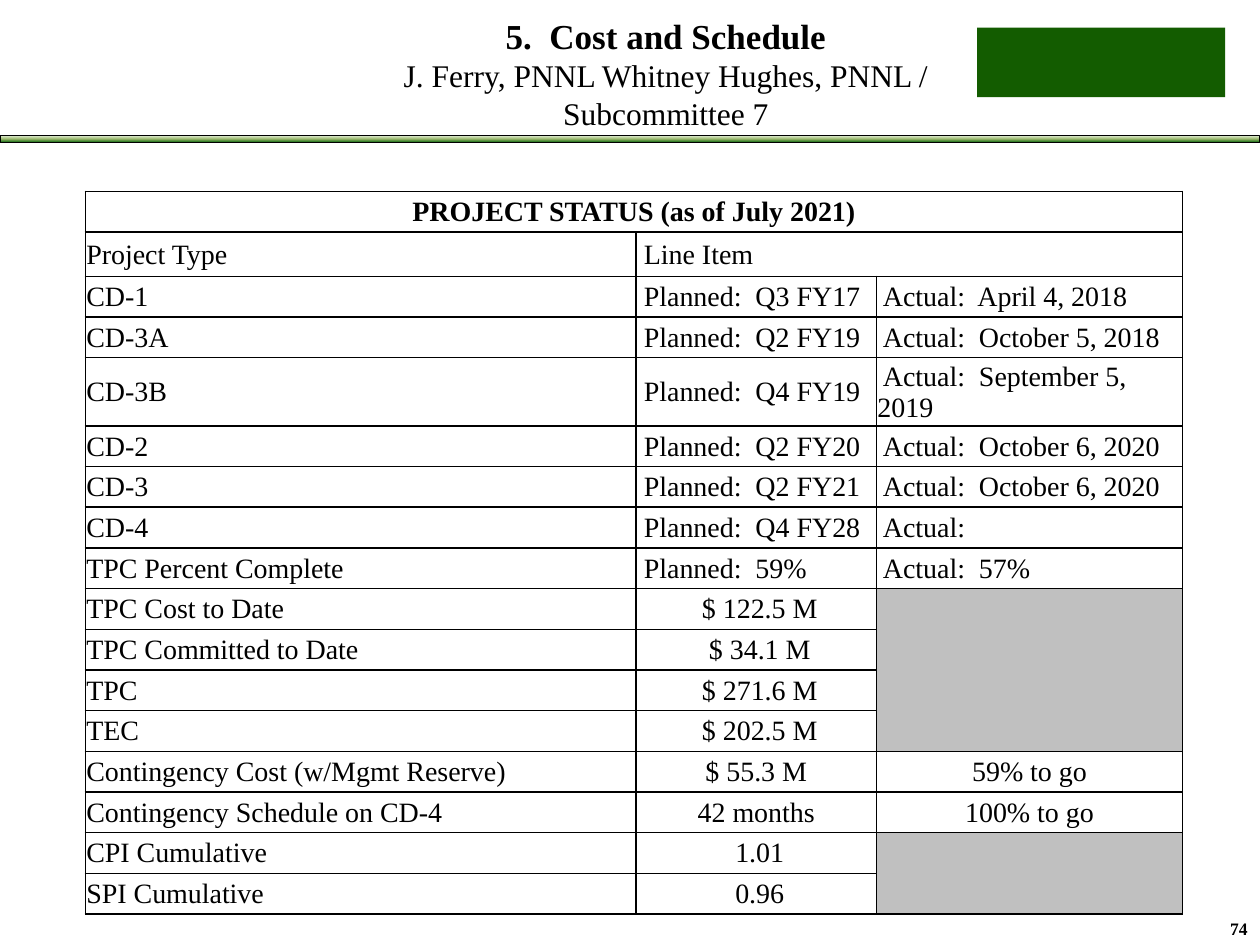
from lxml import etree
from pptx import Presentation
from pptx import util as u
from pptx.dml.color import RGBColor
from pptx.enum import shapes, text
from pptx.oxml import ns, parse_xml

Cm, Pt = u.Cm, u.Pt
LEFT, CENTER, RIGHT = text.PP_ALIGN.LEFT, text.PP_ALIGN.CENTER, text.PP_ALIGN.RIGHT
SERIF = "Times New Roman"
COLORS = {"black": "000000", "white": "FFFFFF", "gray": "C0C0C0", "green": "135C00",
          "band_light": "DDEBCF", "band_mid": "9CB86E", "band_dark": "156B13"}

HEADING = "PROJECT STATUS (as of July 2021)"
MILESTONES = [
    ("Project Type", " Line Item", ""),
    ("CD-1", " Planned:  Q3 FY17", " Actual:  April 4, 2018"),
    ("CD-3A", " Planned:  Q2 FY19", " Actual:  October 5, 2018"),
    ("CD-3B", " Planned:  Q4 FY19", " Actual:  September 5, 2019"),
    ("CD-2", " Planned:  Q2 FY20", " Actual:  October 6, 2020"),
    ("CD-3", " Planned:  Q2 FY21", " Actual:  October 6, 2020"),
    ("CD-4", " Planned:  Q4 FY28", " Actual: "),
    ("TPC Percent Complete", " Planned:  59%", " Actual:  57%"),
]
AMOUNTS = [
    ("TPC Cost to Date", " $ 122.5 M", ""),
    ("TPC Committed to Date", " $ 34.1 M", ""),
    ("TPC", " $ 271.6 M", ""),
    ("TEC", " $ 202.5 M", ""),
    ("Contingency Cost (w/Mgmt Reserve)", "$ 55.3 M", "59% to go"),
    ("Contingency Schedule on CD-4", "42 months", "100% to go"),
    ("CPI Cumulative", " 1.01", ""),
    ("SPI Cumulative", " 0.96", ""),
]
COLUMN_WIDTHS = (11.1, 4.85, 6.17)
ROW_HEIGHT = 0.82
TALL_ROWS = {1: 0.89, 4: 1.37}
MERGES = [((0, 0), (0, 2)), ((1, 1), (1, 2)), ((9, 2), (12, 2)), ((15, 2), (16, 2))]
GRAY_CELLS = {(9, 2), (15, 2)}


def rgb(name):
    return RGBColor.from_string(COLORS[name])


def set_font(font, size, bold=False):
    font.name, font.size, font.bold = SERIF, Pt(size), bold
    font.color.rgb = rgb("black")


def add_text_box(s, left, top, width, height, align, anchor=text.MSO_ANCHOR.TOP):
    """Add a wrapping text box and return its first paragraph."""
    tf = s.shapes.add_textbox(Cm(left), Cm(top), Cm(width), Cm(height)).text_frame
    tf.word_wrap = True
    tf.vertical_anchor = anchor
    p = tf.paragraphs[0]
    p.alignment = align
    return p


def add_run(p, words, size, bold=False):
    r = p.add_run()
    r.text = words
    set_font(r.font, size, bold)


def add_rectangle(s, left, top, width, height):
    sp = s.shapes.add_shape(shapes.MSO_SHAPE.RECTANGLE,
                            Cm(left), Cm(top), Cm(width), Cm(height))
    sp.shadow.inherit = False
    return sp


def add_band(s):
    """Add the green gradient rule below the header."""
    sp = add_rectangle(s, 0, 2.74, 25.4, 0.13)
    stops = "".join(f'<a:gs pos="{pos}"><a:srgbClr val="{COLORS[name]}"/></a:gs>'
                    for pos, name in ((0, "band_light"), (50000, "band_mid"),
                                      (100000, "band_dark")))
    gradient = parse_xml(f'<a:gradFill {ns.nsdecls("a")}><a:gsLst>{stops}</a:gsLst>'
                         '<a:lin ang="5400000" scaled="0"/></a:gradFill>')
    sp._element.spPr.find(ns.qn("a:prstGeom")).addnext(gradient)
    sp.line.color.rgb = rgb("black")
    sp.line.width = Pt(0.5)


def add_corner_block(s):
    sp = add_rectangle(s, 19.7, 0.56, 5, 1.4)
    sp.fill.solid()
    sp.fill.fore_color.rgb = rgb("green")
    sp.line.fill.background()


def add_title(s):
    p = add_text_box(s, 7.01, 0.32, 12.83, 2.31, CENTER, text.MSO_ANCHOR.MIDDLE)
    add_run(p, "5.  Cost and Schedule", 20, True)
    p.add_line_break()
    add_run(p, "J. Ferry, PNNL Whitney Hughes, PNNL / Subcommittee 7", 18)


def add_page_number(s):
    p = add_text_box(s, 24.36, 18.39, 1.04, 0.66, RIGHT)
    p.text = "74"
    set_font(p.font, 10, True)


def set_borders(cell):
    tc_pr = cell._tc.get_or_add_tcPr()
    for side in ("lnL", "lnR", "lnT", "lnB"):
        ln = etree.SubElement(tc_pr, ns.qn(f"a:{side}"), w=str(Pt(1)))
        fill = etree.SubElement(ln, ns.qn("a:solidFill"))
        etree.SubElement(fill, ns.qn("a:srgbClr"), val=COLORS["black"])


def fill_cell(cell, words, align, bold, background):
    set_borders(cell)
    cell.fill.solid()
    cell.fill.fore_color.rgb = rgb(background)
    cell.margin_left = cell.margin_right = cell.margin_top = Cm(0.02)
    cell.margin_bottom = 0
    cell.vertical_anchor = text.MSO_ANCHOR.MIDDLE
    p = cell.text_frame.paragraphs[0]
    p.text = words
    p.alignment = align
    set_font(p.font, 16, bold)


def add_status_table(s):
    rows = [(HEADING, "", "")] + MILESTONES + AMOUNTS
    heights = [TALL_ROWS.get(i, ROW_HEIGHT) for i in range(len(rows))]
    table = s.shapes.add_table(len(rows), len(COLUMN_WIDTHS), Cm(1.72), Cm(3.86),
                               Cm(sum(COLUMN_WIDTHS)), Cm(sum(heights))).table
    table.first_row = table.horz_banding = False
    for column, width in zip(table.columns, COLUMN_WIDTHS):
        column.width = Cm(width)
    for row, height in zip(table.rows, heights):
        row.height = Cm(height)
    for first, last in MERGES:
        table.cell(*first).merge(table.cell(*last))
    for i, row in enumerate(rows):
        for j, words in enumerate(row):
            centered = i == 0 or (i > len(MILESTONES) and j > 0)
            fill_cell(table.cell(i, j), words, CENTER if centered else LEFT, i == 0,
                      "gray" if (i, j) in GRAY_CELLS else "white")


def main():
    prs = Presentation()
    prs.slide_width, prs.slide_height = Cm(25.4), Cm(19.05)
    s = prs.slides.add_slide(prs.slide_layouts[6])
    add_band(s)
    add_corner_block(s)
    add_title(s)
    add_page_number(s)
    add_status_table(s)
    prs.save("out.pptx")


if __name__ == "__main__":
    main()
